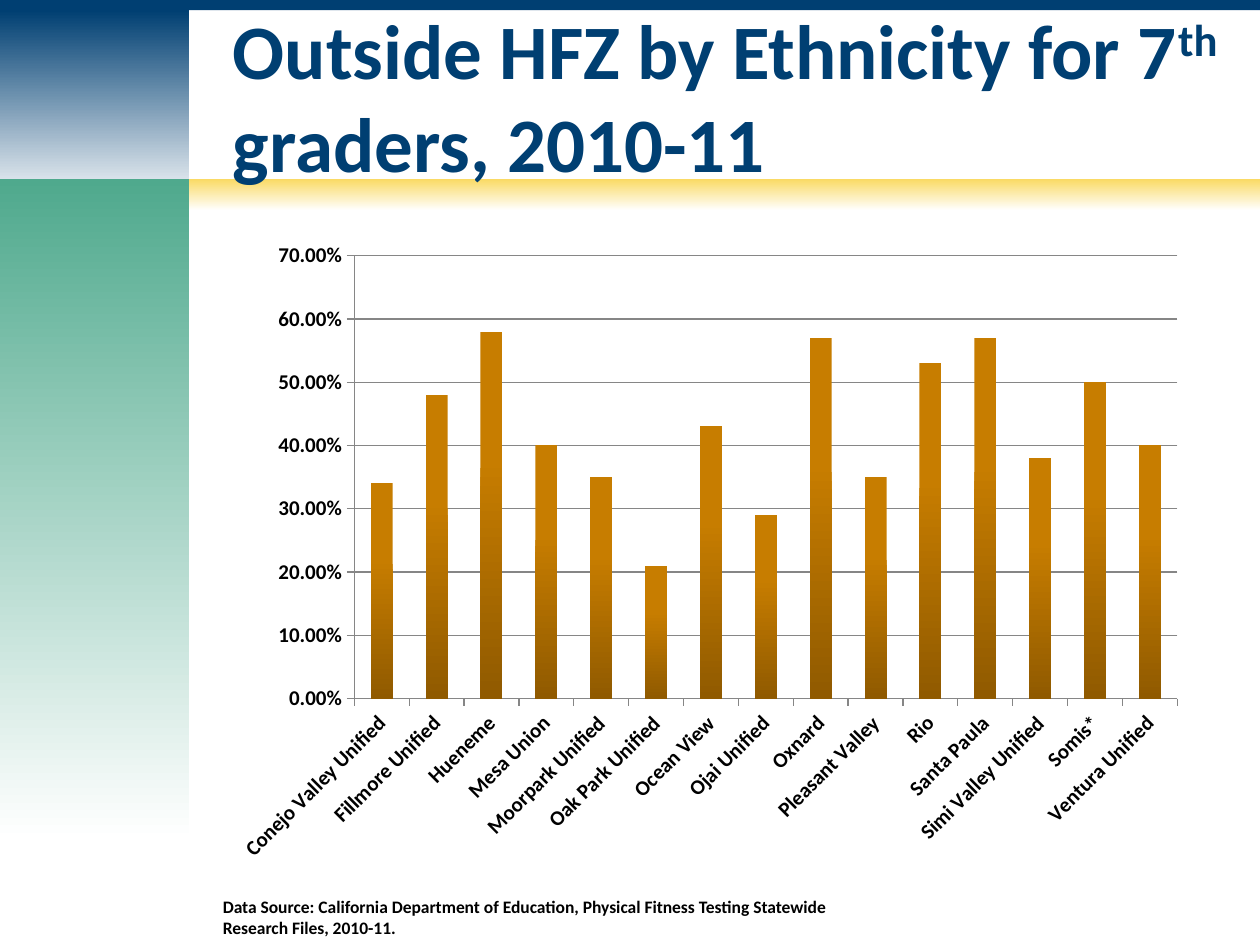
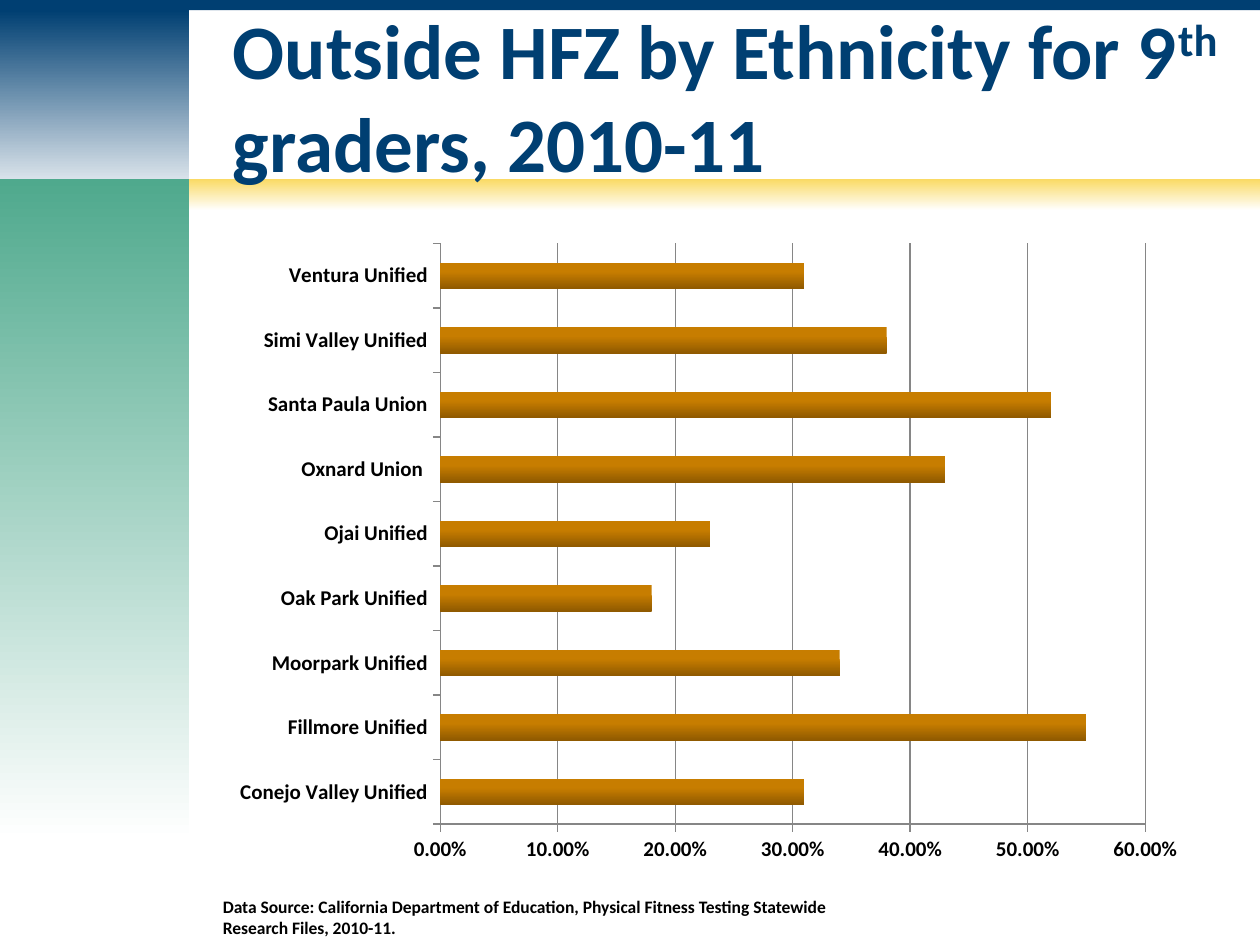
from lxml import etree
from pptx import Presentation
from pptx.chart.data import CategoryChartData
from pptx.dml.color import RGBColor
from pptx.enum.chart import XL_CHART_TYPE as ChartType, XL_TICK_MARK as TickMark
from pptx.enum.shapes import MSO_SHAPE as Shape
from pptx.enum.text import MSO_ANCHOR as Anchor
from pptx.oxml.ns import qn
from pptx.util import Inches, Pt

COLORS = {
    "navy": "003F72",
    "gold": "FADA63",
    "green": "4FA98D",
    "white": "FFFFFF",
    "black": "000000",
    "grid": "868686",
    "bar": "C77D00",
    "bar_dark": "905A00",
}
FONT = "Calibri"
DOWNWARD = 270
TITLE_BOX = (1.75, 0.17, 8.17, 1.17)
CHART_BOX = (1.75, 1.83, 7.75, 5.11)
SOURCE_BOX = (1.67, 7.06, 5.08, 0.44)
BANDS = [
    ((0, 0.08, 1.5, 1.58), "navy", True),
    ((0.5, 1.42, 9.5, 0.25), "gold", True),
    ((0, 0, 10, 0.08), "navy", False),
    ((0, 1.42, 1.5, 5.25), "green", True),
]
SOURCE = ("Data Source: California Department of Education, Physical Fitness "
          "Testing Statewide Research Files, 2010-11.")

GRADES = [
    {
        "grade": "7",
        "type": ChartType.COLUMN_CLUSTERED,
        "plot": (0.137, 0.039, 0.843, 0.688),
        "label_turn": -45,
        "top": 0.7,
        "shares": {
            "Conejo Valley Unified": 0.34, "Fillmore Unified": 0.48,
            "Hueneme": 0.58, "Mesa Union": 0.40, "Moorpark Unified": 0.35,
            "Oak Park Unified": 0.21, "Ocean View": 0.43,
            "Ojai Unified": 0.29, "Oxnard": 0.57, "Pleasant Valley": 0.35,
            "Rio": 0.53, "Santa Paula": 0.57, "Simi Valley Unified": 0.38,
            "Somis*": 0.50, "Ventura Unified": 0.40,
        },
    },
    {
        "grade": "9",
        "type": ChartType.BAR_CLUSTERED,
        "plot": (0.225, 0.02, 0.722, 0.902),
        "label_turn": 0,
        "top": 0.6,
        "shares": {
            "Conejo Valley Unified": 0.31, "Fillmore Unified": 0.55,
            "Moorpark Unified": 0.34, "Oak Park Unified": 0.18,
            "Ojai Unified": 0.23, "Oxnard Union ": 0.43,
            "Santa Paula Union": 0.52, "Simi Valley Unified": 0.38,
            "Ventura Unified": 0.31,
        },
    },
]


def rgb(name):
    """Return a palette colour."""
    return RGBColor.from_string(COLORS[name])


def inches(box):
    """Convert a box to lengths."""
    return [Inches(length) for length in box]


def style_font(font, size, color):
    """Apply the shared bold typeface."""
    font.name, font.size, font.bold = FONT, Pt(size), True
    font.color.rgb = rgb(color)


def fade(fill, start, end, start_at=0):
    """Fill with a downward gradient."""
    fill.gradient()
    fill.gradient_angle = DOWNWARD
    for stop, color, position in zip(fill.gradient_stops, (start, end), (start_at, 1)):
        stop.color.rgb = rgb(color)
        stop.position = position


def add_bands(slide):
    """Draw the coloured bands behind the content."""
    for box, color, fades in BANDS:
        band = slide.shapes.add_shape(Shape.RECTANGLE, *inches(box))
        band.shadow.inherit = False
        band.line.fill.background()
        if fades:
            fade(band.fill, color, "white")
        else:
            band.fill.solid()
            band.fill.fore_color.rgb = rgb(color)


def add_text(slide, box, parts, size, color, anchor=Anchor.TOP):
    """Write one wrapped paragraph of runs and return the runs."""
    frame = slide.shapes.add_textbox(*inches(box)).text_frame
    frame.word_wrap = True
    frame.vertical_anchor = anchor
    paragraph = frame.paragraphs[0]
    for part in parts:
        run = paragraph.add_run()
        run.text = part
        style_font(run.font, size, color)
    return paragraph.runs


def add_title(slide, box, grade):
    """Write the title with a raised ordinal ending."""
    parts = [f"Outside HFZ by Ethnicity for {grade}", "th", " graders, 2010-11"]
    ordinal = add_text(slide, box, parts, 44, "navy", Anchor.MIDDLE)[1]
    ordinal.font._element.set("baseline", "30000")


def place_plot(chart, plot):
    """Fix the inner plot area as fractions of the chart."""
    area = chart._chartSpace.chart.plotArea
    for old_layout in area.findall(qn("c:layout")):
        area.remove(old_layout)
    layout = etree.Element(qn("c:layout"))
    manual = etree.SubElement(layout, qn("c:manualLayout"))
    settings = [("layoutTarget", "inner"), ("xMode", "edge"), ("yMode", "edge")]
    for tag, value in settings + list(zip("xywh", plot)):
        etree.SubElement(manual, qn(f"c:{tag}")).set("val", str(value))
    area.insert(0, layout)


def style_axes(chart, top, label_turn):
    """Format both axes, the gridlines and the label angle."""
    shares_axis, districts_axis = chart.value_axis, chart.category_axis
    for axis in (shares_axis, districts_axis):
        axis.major_tick_mark = TickMark.OUTSIDE
        axis.minor_tick_mark = TickMark.NONE
        axis.format.line.color.rgb = rgb("grid")
        style_font(axis.tick_labels.font, 12, "black")
    shares_axis.minimum_scale, shares_axis.maximum_scale = 0, top
    shares_axis.major_unit = 0.1
    shares_axis.tick_labels.number_format = "0.00%"
    shares_axis.tick_labels.number_format_is_linked = False
    shares_axis.has_major_gridlines = True
    shares_axis.major_gridlines.format.line.color.rgb = rgb("grid")
    districts_axis.has_major_gridlines = False
    label_body = districts_axis._element.find(qn("c:txPr")).find(qn("a:bodyPr"))
    label_body.set("rot", str(label_turn * 60000))


def add_share_chart(slide, box, grade):
    """Chart the share of students outside the zone by district."""
    data = CategoryChartData(number_format="0.00%")
    data.categories = list(grade["shares"])
    data.add_series("Series 1", list(grade["shares"].values()))
    chart = slide.shapes.add_chart(grade["type"], *inches(box), data).chart
    chart.has_legend = False
    chart.has_title = False
    style_font(chart.font, 12, "black")
    style_axes(chart, grade["top"], grade["label_turn"])
    place_plot(chart, grade["plot"])
    bars = chart.plots[0]
    bars.gap_width = 150
    bars.vary_by_categories = False
    fade(bars.series[0].format.fill, "bar", "bar_dark", 0.35)


def add_grade_slide(deck, grade):
    """Build the slide of one grade."""
    slide = deck.slides.add_slide(deck.slide_layouts[6])
    add_bands(slide)
    add_title(slide, TITLE_BOX, grade["grade"])
    add_text(slide, SOURCE_BOX, [SOURCE], 10, "black")
    add_share_chart(slide, CHART_BOX, grade)


def main():
    """Build and save the deck."""
    deck = Presentation()
    deck.slide_width, deck.slide_height = Inches(10), Inches(7.5)
    for grade in GRADES:
        add_grade_slide(deck, grade)
    deck.save("out.pptx")


if __name__ == "__main__":
    main()
